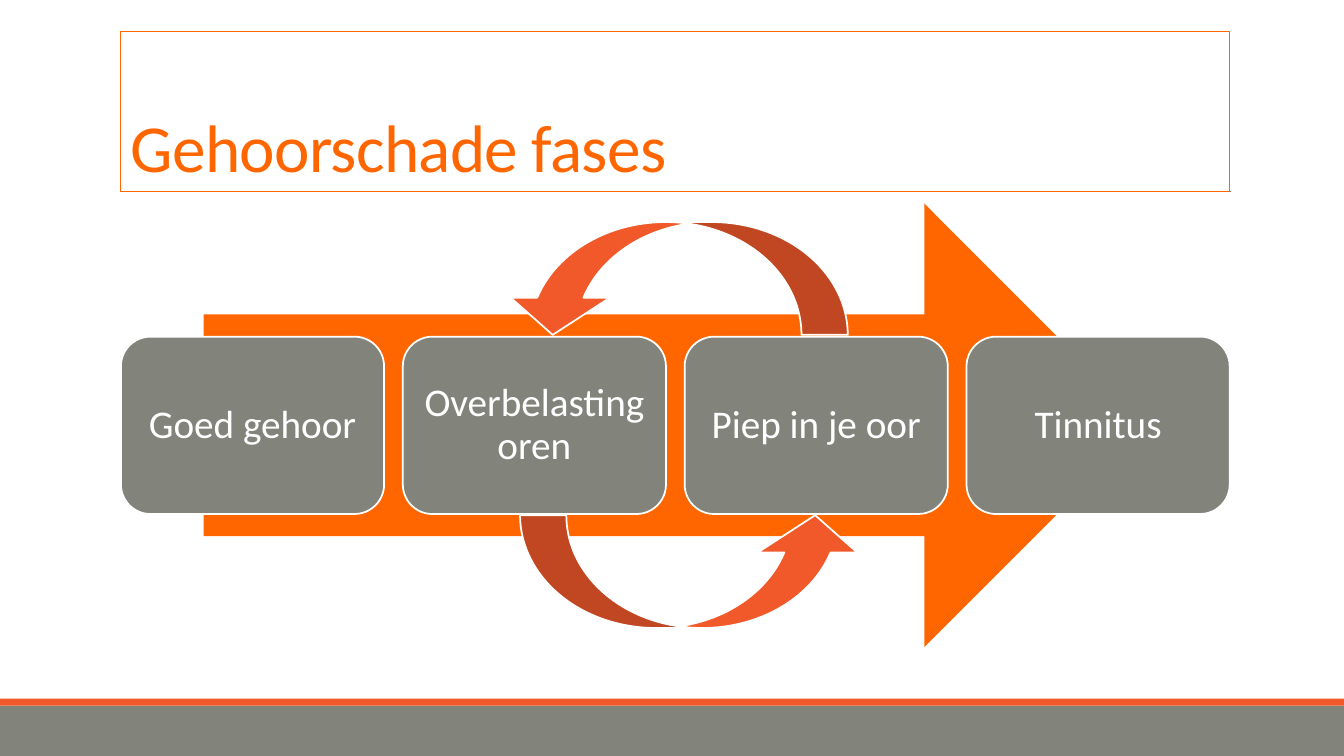
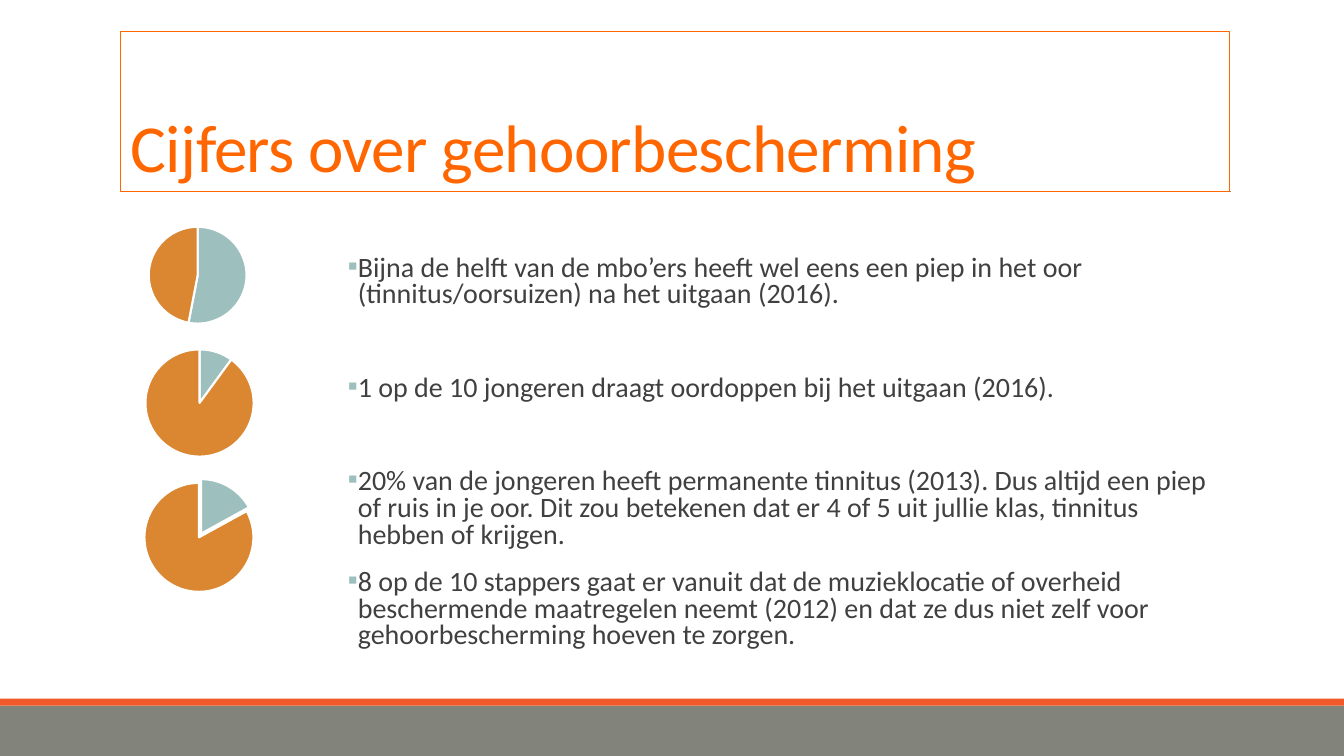
from dataclasses import dataclass

from lxml.etree import SubElement
from pptx import Presentation
from pptx.chart.data import CategoryChartData
from pptx.dml.color import RGBColor
from pptx.enum.chart import XL_CHART_TYPE
from pptx.enum.shapes import MSO_CONNECTOR, MSO_SHAPE
from pptx.enum.text import MSO_ANCHOR, PP_ALIGN
from pptx.oxml.ns import qn
from pptx.util import Pt


@dataclass(frozen=True)
class Theme:
    """Hold the colours, font and type sizes shared by the slides."""
    font: str = "Calibri"
    orange: str = "FF6600"
    red: str = "F1592A"
    grey: str = "82847C"
    rule: str = "808080"
    text: str = "404040"
    white: str = "FFFFFF"
    black: str = "000000"
    teal: str = "9DBFBE"
    amber: str = "DB8631"
    title_size: int = 48
    phase_size: int = 28
    body_size: int = 20
    chart_size: int = 10


T = Theme()
WIDTH, HEIGHT = 960, 540
LEFT, CONTENT_W = 86.4, 792
PHASES = ("Goed gehoor", "Overbelasting oren", "Piep in je oor", "Tinnitus")
LOOP_ADJ = (0.41, 0.88, 0.33)
WIDE_GAP, NARROW_GAP = 45.5, 12
FACTS = (
    (0, "Bijna de helft van de mbo’ers heeft wel eens een piep in het oor "
        "(tinnitus/oorsuizen) na het uitgaan (2016)."),
    (WIDE_GAP, "1 op de 10 jongeren draagt oordoppen bij het uitgaan (2016)."),
    (WIDE_GAP, "20% van de jongeren heeft permanente tinnitus (2013). Dus altijd "
               "een piep of ruis in je oor. Dit zou betekenen dat er 4 of 5 uit "
               "jullie klas, tinnitus hebben of krijgen."),
    (NARROW_GAP, "8 op de 10 stappers gaat er vanuit dat de muzieklocatie of overheid "
                 "beschermende maatregelen neemt (2012) en dat ze dus niet zelf voor "
                 "gehoorbescherming hoeven te zorgen."),
)
PIES = (
    ((99.4, 160.6, 97.2, 71.3), (53, 47), (0, 0.02, 0.86, 0.98), 0),
    ((101.5, 245.5, 89.3, 81.4), (10, 90), (0.01, 0.07, 0.9, 0.95), 0),
    ((101.5, 339.8, 90, 90), (17, 83), (0.01, 0, 0.9, 0.95), 4),
)


def rgb(color):
    """Turn a hex string into a colour."""
    return RGBColor.from_string(color)


def box(lengths):
    """Convert a left, top, width, height tuple to points."""
    return [Pt(v) for v in lengths]


def set_line(line, color, width):
    """Give a line a colour and a width."""
    line.color.rgb = rgb(color)
    line.width = Pt(width)


def add_block(s, kind, at, fill, outline=None):
    """Add a flat filled shape, with an outline only if a colour is given."""
    sp = s.shapes.add_shape(kind, *box(at))
    sp.shadow.inherit = False
    sp.fill.solid()
    sp.fill.fore_color.rgb = rgb(fill)
    if outline:
        set_line(sp.line, outline, 1.25)
    else:
        sp.line.fill.background()
    return sp


def add_run(p, text, size, color):
    """Add a run in the theme font."""
    r = p.add_run()
    r.text = text
    r.font.name = T.font
    r.font.size = Pt(size)
    r.font.color.rgb = rgb(color)
    return r


def add_rule(s, x1, x2, y):
    """Add the thin horizontal rule under the title."""
    cx = s.shapes.add_connector(MSO_CONNECTOR.STRAIGHT, Pt(x1), Pt(y), Pt(x2), Pt(y))
    set_line(cx.line, T.rule, 0.5)
    SubElement(cx.element.spPr, qn("a:effectLst"))


def add_title(s, text):
    """Add the outlined title box."""
    sp = s.shapes.add_textbox(*box((LEFT, 22.3, CONTENT_W, 114.5)))
    set_line(sp.line, T.orange, 0.75)
    tf = sp.text_frame
    tf.word_wrap = True
    tf.vertical_anchor = MSO_ANCHOR.BOTTOM
    p = tf.paragraphs[0]
    p.line_spacing = 0.85
    r = add_run(p, text, T.title_size, T.orange)
    r.font._element.set("spc", "-50")


def new_slide(prs, title):
    """Add a blank slide with the shared bands, rule and title."""
    s = prs.slides.add_slide(prs.slide_layouts[6])
    add_block(s, MSO_SHAPE.RECTANGLE, (0, 504, WIDTH, 36), T.grey)
    add_block(s, MSO_SHAPE.RECTANGLE, (0, 499, WIDTH, 5), T.red)
    add_rule(s, 94.3, 879.1, 136.8)
    add_title(s, title)
    return s


def add_phase(s, at, text):
    """Add a rounded box naming one phase."""
    sp = add_block(s, MSO_SHAPE.ROUNDED_RECTANGLE, at, T.grey, T.white)
    tf = sp.text_frame
    tf.word_wrap = True
    tf.vertical_anchor = MSO_ANCHOR.MIDDLE
    tf.margin_left = tf.margin_right = tf.margin_top = tf.margin_bottom = Pt(8)
    p = tf.paragraphs[0]
    p.alignment = PP_ALIGN.CENTER
    p.line_spacing = 0.9
    add_run(p, text, T.phase_size, T.white)


def add_loop(s, left, top, rotation):
    """Add a curved arrow between the two middle phases."""
    sp = add_block(s, MSO_SHAPE.CURVED_UP_ARROW, (left, top, 246.2, 80.6), T.red, T.white)
    for i, value in enumerate(LOOP_ADJ):
        sp.adjustments[i] = value
    sp.rotation = rotation


def add_bullet(p):
    """Give a paragraph a hanging square bullet."""
    pPr = p._p.get_or_add_pPr()
    pPr.set("marL", str(Pt(7.2)))
    pPr.set("indent", str(-Pt(7.2)))
    color = SubElement(pPr, qn("a:buClr"))
    SubElement(color, qn("a:srgbClr"), val=T.teal)
    SubElement(pPr, qn("a:buFont"), typeface=T.font)
    SubElement(pPr, qn("a:buChar"), char="▪")


def add_facts(s, at, facts):
    """Add the bulleted list, each fact with its own space before."""
    tf = s.shapes.add_textbox(*box(at)).text_frame
    tf.word_wrap = True
    tf.margin_left = tf.margin_right = 0
    for i, (gap, text) in enumerate(facts):
        p = tf.add_paragraph() if i else tf.paragraphs[0]
        add_bullet(p)
        p.line_spacing = 0.8
        p.space_before = Pt(gap)
        p.space_after = Pt(2)
        add_run(p, text, T.body_size, T.text)


def set_plot_layout(chart, fractions):
    """Place the inner plot area by fractions of the chart."""
    area = chart.element.find(".//" + qn("c:plotArea"))
    for old in area.findall(qn("c:layout")):
        area.remove(old)
    layout = SubElement(area, qn("c:layout"))
    area.insert(0, layout)
    manual = SubElement(layout, qn("c:manualLayout"))
    SubElement(manual, qn("c:layoutTarget"), val="inner")
    for name in ("xMode", "yMode"):
        SubElement(manual, qn("c:" + name), val="edge")
    for name, value in zip("xywh", fractions):
        SubElement(manual, qn("c:" + name), val=str(value))


def add_pie(s, at, values, layout, explosion):
    """Add a small two-slice pie, pulled apart if an explosion is given."""
    data = CategoryChartData()
    data.categories = ["1", "2"]
    data.add_series("Series 1", values)
    chart = s.shapes.add_chart(XL_CHART_TYPE.PIE, *box(at), data).chart
    chart.has_title = chart.has_legend = False
    chart.font.name = T.font
    chart.font.size = Pt(T.chart_size)
    chart.font.color.rgb = rgb(T.black)
    plot = chart.plots[0]
    plot.vary_by_categories = True
    series = plot.series[0]
    for i, color in enumerate((T.teal, T.amber)):
        fmt = series.points[i].format
        fmt.fill.solid()
        fmt.fill.fore_color.rgb = rgb(color)
        set_line(fmt.line, T.white, 1.5)
    set_plot_layout(chart, layout)
    if explosion:
        ser = chart.element.find(".//" + qn("c:ser"))
        pull = SubElement(ser, qn("c:explosion"), val=str(explosion))
        ser.find(qn("c:dPt")).addprevious(pull)


def build_phases(prs):
    """Build the slide with the phases of hearing damage."""
    s = new_slide(prs, "Gehoorschade fases")
    add_block(s, MSO_SHAPE.RIGHT_ARROW, (145.4, 145.4, 673.2, 316.8), T.orange)
    width = 188
    pitch = (CONTENT_W - width) / (len(PHASES) - 1)
    for i, text in enumerate(PHASES):
        add_phase(s, (LEFT + i * pitch, 240.5, width, 126.7), text)
    add_loop(s, 371.5, 368, 0)
    add_loop(s, 359.3, 158.6, 180)


def build_figures(prs):
    """Build the slide with figures on hearing protection."""
    s = new_slide(prs, "Cijfers over gehoorbescherming")
    add_facts(s, (248.4, 179, 630, 312), FACTS)
    for pie in PIES:
        add_pie(s, *pie)


def main():
    """Build and save the presentation."""
    prs = Presentation()
    prs.slide_width, prs.slide_height = Pt(WIDTH), Pt(HEIGHT)
    build_phases(prs)
    build_figures(prs)
    prs.save("out.pptx")


if __name__ == "__main__":
    main()
